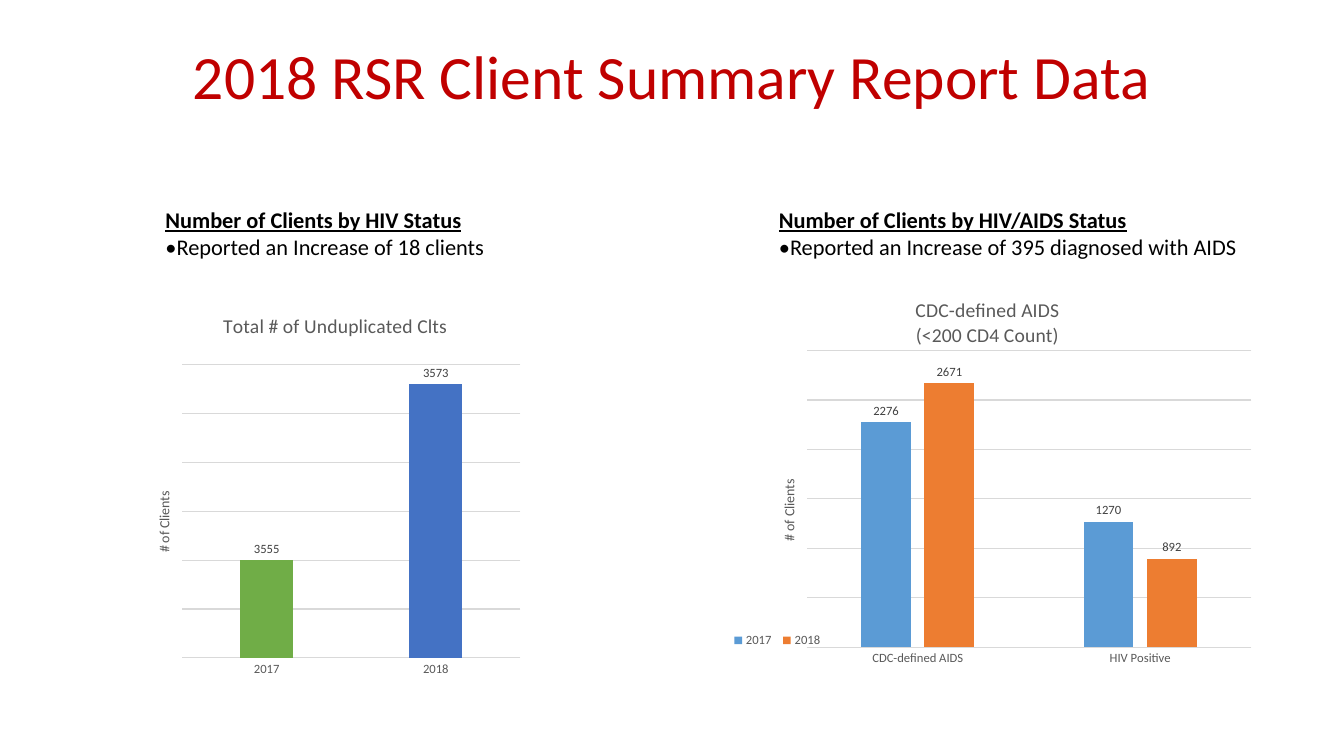
from lxml.etree import SubElement
from pptx import Presentation
from pptx.chart.data import CategoryChartData
from pptx.dml.color import RGBColor
from pptx.enum.chart import XL_CHART_TYPE, XL_LABEL_POSITION, XL_LEGEND_POSITION, XL_TICK_MARK
from pptx.enum.text import MSO_ANCHOR, MSO_AUTO_SIZE, PP_ALIGN
from pptx.oxml.ns import qn
from pptx.util import Cm, Pt

FONT = "Calibri"
RED = RGBColor(0xC0, 0x00, 0x00)
BLACK = RGBColor(0x00, 0x00, 0x00)
DARK_GRAY = RGBColor(0x40, 0x40, 0x40)
GRAY = RGBColor(0x59, 0x59, 0x59)
GRID_GRAY = RGBColor(0xD9, 0xD9, 0xD9)
GREEN = RGBColor(0x70, 0xAD, 0x47)
BLUE = RGBColor(0x44, 0x72, 0xC4)
LIGHT_BLUE = RGBColor(0x5B, 0x9B, 0xD5)
ORANGE = RGBColor(0xED, 0x7D, 0x31)


def format_font(font, size, color, **extras):
    values = {"name": FONT, "size": Pt(size), "bold": False, **extras}
    for name, value in values.items():
        setattr(font, name, value)
    font.color.rgb = color


def format_line(line):
    line.color.rgb = GRID_GRAY
    line.width = Pt(0.75)


def paint(format_object, color):
    format_object.fill.solid()
    format_object.fill.fore_color.rgb = color


def place(element, **position):
    for layout in element.findall(qn("c:layout")):
        element.remove(layout)
    layout = SubElement(element, qn("c:layout"))
    manual = SubElement(layout, qn("c:manualLayout"))
    if "w" in position:
        SubElement(manual, qn("c:layoutTarget")).set("val", "inner")
    for axis in "xy":
        SubElement(manual, qn(f"c:{axis}Mode")).set("val", "edge")
    for name, value in position.items():
        SubElement(manual, qn(f"c:{name}")).set("val", str(value))
    overlay = element.find(qn("c:overlay"))
    if overlay is None:
        element.insert(0, layout)
    else:
        overlay.addprevious(layout)


def write_chart_text(title, lines, size, x, y):
    frame = title.text_frame
    frame.text = "\n".join(lines)
    for paragraph in frame.paragraphs:
        format_font(paragraph.runs[0].font, size, GRAY)
    place(title._element, x=x, y=y)


def add_title(slide, text):
    title = slide.shapes.title
    title.left, title.top, title.width, title.height = Cm(2.33), Cm(1.01), Cm(29.21), Cm(2.01)
    title.text_frame.text = text
    title.text_frame.vertical_anchor = MSO_ANCHOR.MIDDLE
    paragraph = title.text_frame.paragraphs[0]
    paragraph.alignment = PP_ALIGN.CENTER
    paragraph.line_spacing = 0.9
    format_font(paragraph.runs[0].font, 44, RED)


def add_finding(slide, left, width, heading, finding):
    box = slide.shapes.add_textbox(left, Cm(5.08), width, Cm(1.62))
    frame = box.text_frame
    frame.word_wrap = True
    frame.auto_size = MSO_AUTO_SIZE.SHAPE_TO_FIT_TEXT
    frame.text = f"{heading}\n{finding}"
    for paragraph, is_heading in zip(frame.paragraphs, (True, False)):
        format_font(paragraph.runs[0].font, 16, BLACK, bold=is_heading, underline=is_heading)


def add_column_chart(slide, left, width, height, categories, series, scale, plot_area):
    data = CategoryChartData()
    data.categories = categories
    for name, values in series:
        data.add_series(name, values)
    chart = slide.shapes.add_chart(
        XL_CHART_TYPE.COLUMN_CLUSTERED, left, Cm(7.26), width, height, data
    ).chart
    format_font(chart.font, 10, BLACK)
    chart.has_legend = False
    place(chart._chartSpace.chart.plotArea, **dict(zip("xywh", plot_area)))

    plot = chart.plots[0]
    plot.gap_width, plot.overlap, plot.vary_by_categories = 219, -27, False
    for one_series in plot.series:
        labels = one_series.data_labels
        labels.show_value = True
        labels.position = XL_LABEL_POSITION.OUTSIDE_END
        format_font(labels.font, 9, DARK_GRAY)

    category_axis, value_axis = chart.category_axis, chart.value_axis
    category_axis.major_tick_mark = XL_TICK_MARK.NONE
    format_font(category_axis.tick_labels.font, 9, GRAY)
    format_line(category_axis.format.line)
    value_axis.visible = False
    value_axis.minimum_scale, value_axis.maximum_scale, value_axis.major_unit = scale
    value_axis.has_major_gridlines = True
    format_line(value_axis.major_gridlines.format.line)
    return chart


def add_chart_titles(chart, lines, title_at, axis_title_at):
    write_chart_text(chart.chart_title, lines, 14, *title_at)
    axis_title = chart.value_axis.axis_title
    write_chart_text(axis_title, ["# of Clients"], 10, *axis_title_at)
    body = axis_title.text_frame._txBody.bodyPr
    body.set("rot", "-5400000")
    body.set("vert", "horz")


def add_legend(chart):
    chart.has_legend = True
    legend = chart.legend
    legend.position = XL_LEGEND_POSITION.BOTTOM
    legend.include_in_layout = False
    format_font(legend.font, 9, GRAY)
    place(legend._element, x=0.01, y=0.81, w=0.19, h=0.06)


def main():
    presentation = Presentation()
    presentation.slide_width, presentation.slide_height = Cm(33.87), Cm(19.05)
    slide = presentation.slides.add_slide(presentation.slide_layouts[5])
    add_title(slide, "2018 RSR Client Summary Report Data")

    clients = add_column_chart(
        slide, Cm(2.33), Cm(12.09), Cm(11.23), ["2017", "2018"],
        [("Series 1", (3555, 3573))], (3545, 3575, 5), (0.187, 0.172, 0.705, 0.658),
    )
    add_chart_titles(clients, ["Total # of Unduplicated Clts"], (0.265, 0.047), (0.125, 0.45))
    for index, color in enumerate((GREEN, BLUE)):
        paint(clients.plots[0].series[0].points[index].format, color)
    add_finding(slide, Cm(3.92), Cm(10.52), "Number of Clients by HIV Status",
                "•Reported an Increase of 18 clients")

    status = add_column_chart(
        slide, Cm(18.19), Cm(13.36), Cm(10.57), ["CDC-defined AIDS", "HIV Positive"],
        [("2017", (2276, 1270)), ("2018", (2671, 892))], (0, 3000, 500),
        (0.16, 0.149, 0.84, 0.707),
    )
    add_chart_titles(status, ["CDC-defined AIDS", "(<200 CD4 Count)"], (0.36, 0.014), (0.105, 0.45))
    for series, color in zip(status.plots[0].series, (LIGHT_BLUE, ORANGE)):
        paint(series.format, color)
    add_legend(status)
    add_finding(slide, Cm(19.38), Cm(12.14), "Number of Clients by HIV/AIDS Status",
                "•Reported an Increase of 395 diagnosed with AIDS")

    presentation.save("out.pptx")


if __name__ == "__main__":
    main()
